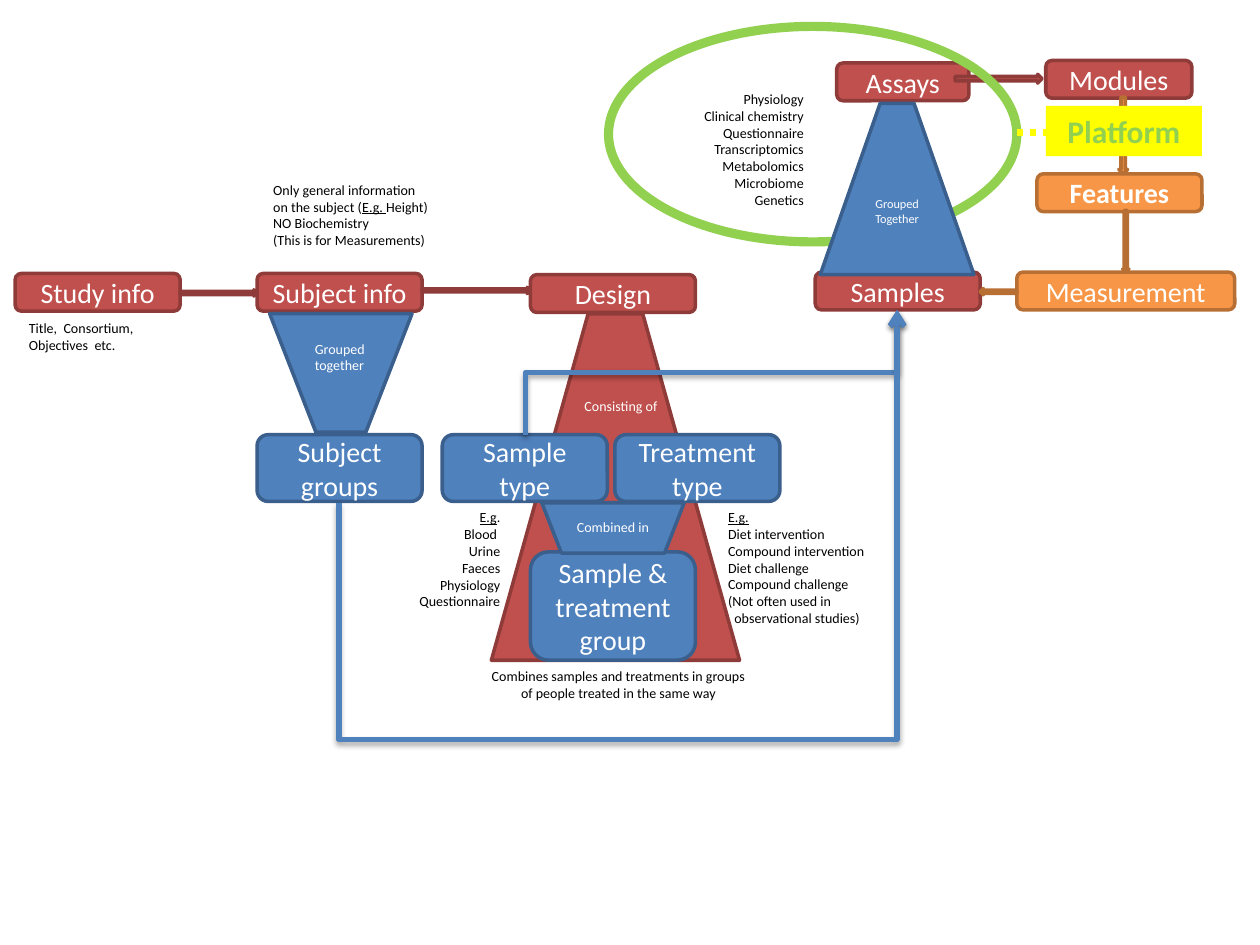
from lxml import etree
from pptx import Presentation
from pptx.dml.color import RGBColor
from pptx.enum.dml import MSO_LINE
from pptx.enum.shapes import MSO_CONNECTOR, MSO_SHAPE
from pptx.enum.text import MSO_ANCHOR, MSO_AUTO_SIZE, PP_ALIGN
from pptx.oxml.ns import qn
from pptx.util import Inches, Pt

ROUNDED, RECTANGLE = MSO_SHAPE.ROUNDED_RECTANGLE, MSO_SHAPE.RECTANGLE
TRAPEZOID, OVAL = MSO_SHAPE.TRAPEZOID, MSO_SHAPE.OVAL
RIGHT, LEFT, DOWN = MSO_SHAPE.RIGHT_ARROW, MSO_SHAPE.LEFT_ARROW, MSO_SHAPE.DOWN_ARROW
STRAIGHT, ELBOW = MSO_CONNECTOR.STRAIGHT, MSO_CONNECTOR.ELBOW
DOTTED = MSO_LINE.ROUND_DOT
ALIGN_LEFT, ALIGN_CENTER, ALIGN_RIGHT = PP_ALIGN.LEFT, PP_ALIGN.CENTER, PP_ALIGN.RIGHT
TOP, MIDDLE = MSO_ANCHOR.TOP, MSO_ANCHOR.MIDDLE
GROW = MSO_AUTO_SIZE.SHAPE_TO_FIT_TEXT

COLUMNS, ROWS = 100, 75
RED, BLUE, ORANGE = ("C0504D", "8E3B39"), ("4F81BD", "3A5F8C"), ("F79646", "B76F34")
GREEN, YELLOW, WHITE, BLACK = "92D050", "FFFF00", "FFFFFF", "000000"


def color(hex_string):
    return RGBColor.from_string(hex_string)


def child(parent, tag, **attributes):
    return etree.SubElement(parent, qn(tag), attributes)


class Diagram:
    """Places elements on a grid of COLUMNS by ROWS cells."""

    font = "Calibri"

    def __init__(self, deck):
        self.page = deck.slides.add_slide(deck.slide_layouts[6])
        self.column = deck.slide_width / COLUMNS
        self.row = deck.slide_height / ROWS

    def cells(self, *lengths):
        """Turn alternating columns and rows into slide units."""
        return [round(n * (self.row if i % 2 else self.column)) for i, n in enumerate(lengths)]

    def set_text(self, frame, text, size, ink, align, bold=False):
        """Newlines part paragraphs, \\v breaks a line, _marks_ underline."""
        for i, line in enumerate(text.split("\n")):
            para = frame.add_paragraph() if i else frame.paragraphs[0]
            if "_" in line:
                for j, piece in enumerate(line.split("_")):
                    if piece:
                        span = para.add_run()
                        span.text = piece
                        span.font.underline = bool(j % 2)
            else:
                para.text = line
            para.alignment = align
            para.font.name, para.font.size = self.font, Pt(size)
            para.font.bold = bold
            para.font.color.rgb = color(ink)

    def shape(self, kind, place, fill=None, line=None, weight=2):
        shape = self.page.shapes.add_shape(kind, *self.cells(*place))
        shape.shadow.inherit = False
        if fill:
            shape.fill.solid()
            shape.fill.fore_color.rgb = color(fill)
        else:
            shape.fill.background()
        if line:
            shape.line.color.rgb = color(line)
            shape.line.width = Pt(weight)
        else:
            shape.line.fill.background()
        return shape

    def box(self, text, palette, left, top, width=13.1, height=3, bold=False):
        box = self.shape(ROUNDED, (left, top, width, height), *palette)
        box.text_frame.vertical_anchor = MIDDLE
        self.set_text(box.text_frame, text, 16, WHITE, ALIGN_CENTER, bold)

    def funnel(self, palette, *place, upside_down=False):
        funnel = self.shape(TRAPEZOID, place, *palette)
        funnel.adjustments[0] = 0.39
        funnel.rotation = 180 if upside_down else 0
        return funnel

    def note(self, text, *place, ink=BLACK, align=ALIGN_LEFT, wrap=False):
        note = self.page.shapes.add_textbox(*self.cells(*place))
        note.text_frame.word_wrap = wrap
        note.text_frame.auto_size = GROW
        self.set_text(note.text_frame, text, 8, ink, align)

    def connector(self, kind, ends, ink, weight):
        link = self.page.shapes.add_connector(kind, *ends)
        link.line.color.rgb = color(ink)
        link.line.width = Pt(weight)
        return link, child(link._element.spPr, "a:effectLst")

    def dotted_link(self, *ends):
        link, _ = self.connector(STRAIGHT, self.cells(*ends), YELLOW, 3.75)
        link.line.dash_style = DOTTED

    def riser(self, *ends, bend=0.5):
        """Elbow arrow that leaves vertically; bend is the share of the rise at its turn."""
        x1, y1, x2, y2 = self.cells(*ends)
        middle_x, middle_y = (x1 + x2) // 2, (y1 + y2) // 2
        half_rise, half_run = (y1 - y2) // 2, (x2 - x1) // 2
        turned = (middle_x + half_rise, middle_y + half_run,
                  middle_x - half_rise, middle_y - half_run)
        link, effects = self.connector(ELBOW, turned, BLUE[0], 3)
        properties = link._element.spPr
        properties.find(qn("a:xfrm")).set("rot", "5400000")
        guides = properties.find(qn("a:prstGeom")).find(qn("a:avLst"))
        child(guides, "a:gd", name="adj1", fmla=f"val {round(bend * 100000)}")
        child(properties.find(qn("a:ln")), "a:tailEnd", type="arrow")
        shadow = child(effects, "a:outerShdw", blurRad=str(Pt(3.1)), dist=str(Pt(1.8)),
                       dir="5400000", rotWithShape="0")
        child(child(shadow, "a:srgbClr", val=BLACK), "a:alpha", val="35000")


def main():
    deck = Presentation()
    deck.slide_width, deck.slide_height = Inches(10), Inches(7.5)
    diagram = Diagram(deck)

    diagram.funnel(RED, 39, 24.9, 19.7, 27.5)
    diagram.box("Study info", RED, 1.2, 21.7)
    diagram.box("Subject info", RED, 20.4, 21.7)
    diagram.box("Design", RED, 42.1, 21.8)
    diagram.box("Samples", RED, 64.7, 21.6)
    diagram.box("Assays", RED, 66.4, 5, 10.5)
    diagram.box("Modules", RED, 83, 4.8, 11.6)
    diagram.box("Subject groups", BLUE, 20.4, 34.5, height=5.3)
    diagram.funnel(BLUE, 21.4, 24.9, 11.3, 9.4, upside_down=True)
    diagram.box("Sample type", BLUE, 35.1, 34.5, height=5.3)
    diagram.box("Sample & treatment group", BLUE, 42.1, 43.8, height=8.6)
    diagram.box("Treatment type", BLUE, 48.8, 34.5, height=5.3)
    diagram.box("Features", ORANGE, 82.3, 13.8, bold=True)
    diagram.box("Measurement", ORANGE, 80.7, 21.6, 17.3)

    for kind, palette, *place in (
        (RIGHT, RED, 14.3, 23, 6.1, 0.5),
        (RIGHT, RED, 33.5, 22.8, 8.6, 0.5),
        (RIGHT, RED, 75.8, 5.9, 6.9, 0.7),
        (DOWN, ORANGE, 88.8, 7.7, 0.7, 6.1),
        (DOWN, ORANGE, 89.1, 16.7, 0.5, 4.9),
        (LEFT, ORANGE, 77.8, 22.9, 2.9, 0.5),
    ):
        diagram.shape(kind, place, *palette)

    diagram.riser(41.7, 34.5, 71.2, 24.6)
    diagram.riser(26.9, 39.9, 71.2, 24.6, bend=-1.23)

    diagram.note("Title,  Consortium,\nObjectives  etc.", 1.3, 24.9, 10.9, 3.7, wrap=True)
    diagram.note("Only general information on the subject (_E.g. _Height)\n"
                 "NO Biochemistry\v(This is for Measurements)", 20.7, 13.9, 14.4, 6.4, wrap=True)
    diagram.note("Physiology\nClinical chemistry\nQuestionnaire\nTranscriptomics\n"
                 "Metabolomics\nMicrobiome\nGenetics", 54.8, 6.7, 10, 10.4, align=ALIGN_RIGHT)
    diagram.note("Grouped\ntogether", 24, 26.5, 6.1, 3.7, ink=WHITE)
    diagram.note("Consisting of", 45.4, 31.1, 7.9, 2.4, ink=WHITE)
    diagram.note("_E.g_.\nBlood \nUrine\nFaeces\nPhysiology\nQuestionnaire",
                 32.2, 39.9, 8.5, 9.1, align=ALIGN_RIGHT)
    diagram.note("_E.g._\nDiet intervention\nCompound intervention\nDiet challenge\n"
                 "Compound challenge\n(Not often used in\v  observational studies)",
                 56.8, 39.9, 13, 10.4)
    diagram.note("Combines samples and treatments in groups\nof people treated in the same way",
                 37.8, 52.5, 22.6, 3.7, align=ALIGN_CENTER)

    diagram.funnel(BLUE, 43, 39.9, 11.3, 4, upside_down=True)
    diagram.note("Combined in", 44.8, 40.7, 7.8, 2.4, ink=WHITE)

    diagram.shape(OVAL, (48.3, 2.1, 32.4, 17.1), line=GREEN, weight=5.25)
    platform = diagram.shape(RECTANGLE, (83, 8.4, 12.4, 4), YELLOW)
    platform.text_frame.vertical_anchor = TOP
    diagram.set_text(platform.text_frame, "Platform", 18, GREEN, ALIGN_CENTER, bold=True)
    diagram.dotted_link(80.7, 10.5, 83.8, 10.5)

    grouping = diagram.funnel(BLUE, 65.1, 8.2, 12.2, 13.6)
    grouping.text_frame.vertical_anchor = MIDDLE
    diagram.set_text(grouping.text_frame, "Grouped\vTogether", 7, WHITE, ALIGN_CENTER)

    deck.save("out.pptx")


if __name__ == "__main__":
    main()
